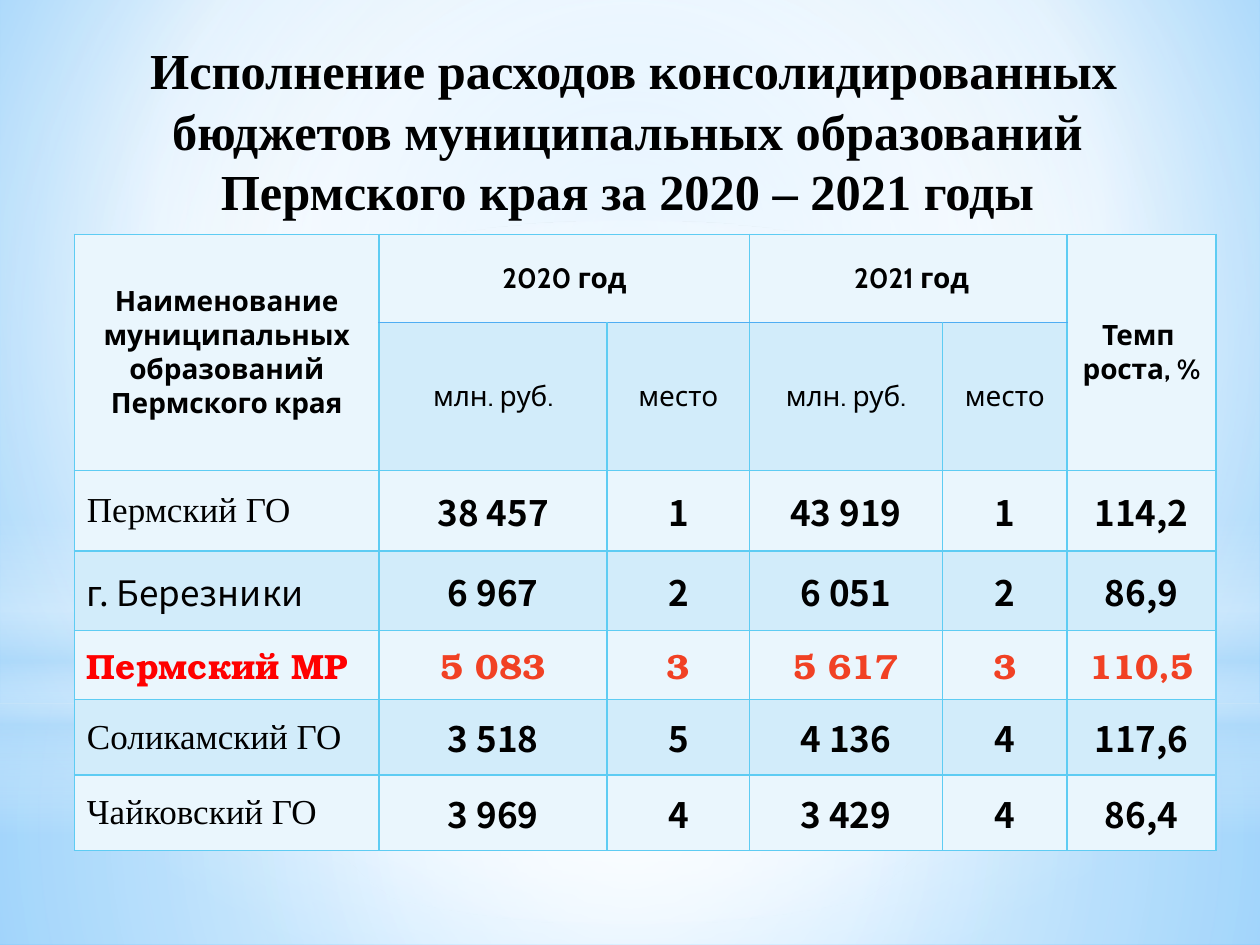
from pptx import Presentation
from pptx.dml.color import RGBColor
from pptx.enum.shapes import MSO_SHAPE
from pptx.enum.text import MSO_ANCHOR, PP_ALIGN
from pptx.oxml import parse_xml
from pptx.oxml.ns import nsdecls, qn
from pptx.util import Pt

RECTANGLE, OVAL = MSO_SHAPE.RECTANGLE, MSO_SHAPE.OVAL
MIDDLE = MSO_ANCHOR.MIDDLE
LEFT, CENTER = PP_ALIGN.LEFT, PP_ALIGN.CENTER

THEME = {
    "ink": "000000", "red": "FF0000", "orange": "F14124",
    "light": "EAF6FD", "band": "D2ECFA",
    "border": "5ECCF3", "header_border": "4FADF3",
    "white": "FFFFFF", "haze": "B4DCFA", "sky": "9ED5FF", "deep_sky": "5BB9FF",
    "title": 28.8, "header": 16, "body": 20,
    "serif": "Times New Roman", "header_font": "Cabin",
    "number_font": "Noto Sans CJK KR", "accent_font": "TeX Gyre Bonum",
}


def gradient(stops, focus=None):
    stop_xml = "".join(
        f'<a:gs pos="{position * 1000}"><a:srgbClr val="{THEME[color]}">'
        f'<a:alpha val="{opacity * 1000}"/></a:srgbClr></a:gs>'
        for position, color, opacity in stops)
    if focus:
        left, top, right, bottom = [edge * 1000 for edge in focus]
        direction = (f'<a:path path="circle"><a:fillToRect l="{left}" t="{top}" '
                     f'r="{right}" b="{bottom}"/></a:path>')
    else:
        direction = '<a:lin ang="5400000" scaled="0"/>'
    return parse_xml(f'<a:gradFill {nsdecls("a")} rotWithShape="1">'
                     f'<a:gsLst>{stop_xml}</a:gsLst>{direction}</a:gradFill>')


def write(frame, lines, font, size, color, bold, align):
    frame.word_wrap = True
    for index, line in enumerate(lines):
        para = frame.add_paragraph() if index else frame.paragraphs[0]
        para.alignment = align
        span = para.add_run()
        span.text = line
        span.font.name = font
        span.font.size = Pt(size)
        span.font.bold = bold
        span.font.color.rgb = RGBColor.from_string(color)


deck = Presentation()
deck.slide_width, deck.slide_height = Pt(720), Pt(540)
page = deck.slides.add_slide(deck.slide_layouts[5])

page.background.fill.solid()
backdrop = page.element.find(".//" + qn("p:bgPr"))
backdrop.replace(backdrop[0], gradient(
    [(0, "sky", 100), (60, "white", 100), (100, "deep_sky", 100)], (20, 10, 20, 60)))

MIDPOINT = (50, 50, 50, 50)
glows = [
    (RECTANGLE, 401.8, 138.2, MIDPOINT,
     [(0, "white", 91), (37, "white", 76), (100, "haze", 79)]),
    (RECTANGLE, 0, 401.8, MIDPOINT,
     [(0, "white", 89), (48, "white", 62), (100, "haze", 79)]),
    (RECTANGLE, 296.6, 180, None,
     [(0, "white", 0), (29, "white", 30), (45, "haze", 40),
      (55, "white", 26), (65, "haze", 60), (100, "white", 0)]),
    (OVAL, 126, 401.8, MIDPOINT, [(0, "white", 100), (56, "white", 0)]),
]
for kind, top, height, focus, stops in glows:
    glow = page.shapes.add_shape(kind, 0, Pt(top), Pt(720), Pt(height))
    glow.shadow.inherit = False
    glow.line.fill.background()
    glow.fill.background()
    properties = glow.element.spPr
    properties.replace(properties.find(qn("a:noFill")), gradient(stops, focus))

column_widths = [174.2, 130.3, 81.4, 110.2, 71.3, 85]
row_heights = [50.4, 52.6, 46, 45.4, 39.4, 43.2, 43.2]
frame = page.shapes.add_table(len(row_heights), len(column_widths), Pt(42.5), Pt(133.9),
                              Pt(sum(column_widths)), Pt(sum(row_heights)))
table = frame.table
table.first_row = table.horz_banding = False
for column, width in zip(table.columns, column_widths):
    column.width = Pt(width)
for row, height in zip(table.rows, row_heights):
    row.height = Pt(height)

for r in range(len(row_heights)):
    for c in range(len(column_widths)):
        cell = table.cell(r, c)
        cell.vertical_anchor = MIDDLE
        cell.fill.solid()
        cell.fill.fore_color.rgb = RGBColor.from_string(THEME["band" if r % 2 else "light"])
        for index, side in enumerate("LRTB"):
            between_headers = 0 < c < 5 and (r, side) in [(0, "B"), (1, "T")]
            color = THEME["header_border" if between_headers else "border"]
            cell._tc.get_or_add_tcPr().insert(index, parse_xml(
                f'<a:ln{side} {nsdecls("a")} w="12700"><a:solidFill>'
                f'<a:srgbClr val="{color}"/></a:solidFill></a:ln{side}>'))

headers = [
    (0, 0, 1, 0, ["Наименование муниципальных образований Пермского края"]),
    (0, 1, 0, 2, ["2020 год"]),
    (0, 3, 0, 4, [" 2021 год"]),
    (0, 5, 1, 5, ["Темп ", "роста, %"]),
]
for top, left, bottom, right, lines in headers:
    table.cell(top, left).merge(table.cell(bottom, right))
    write(table.cell(top, left).text_frame, lines, THEME["header_font"],
          THEME["header"], THEME["ink"], True, CENTER)
for c, label in enumerate(["млн. руб.", "место"] * 2, 1):
    write(table.cell(1, c).text_frame, [label], THEME["header_font"],
          THEME["header"], THEME["ink"], False, CENTER)

serif, number_font, accent_font = THEME["serif"], THEME["number_font"], THEME["accent_font"]
municipalities = [
    (serif, "Пермский ГО", "38 457", "1", "43 919", "1", "114,2"),
    (number_font, "г. Березники", "6 967", "2", "6 051", "2", "86,9"),
    (accent_font, "Пермский МР", "5 083", "3", "5 617", "3", "110,5"),
    (serif, "Соликамский ГО", "3 518", "5", "4 136", "4", "117,6"),
    (serif, "Чайковский ГО", "3 969", "4", "3 429", "4", "86,4"),
]
for r, (name_font, name, *values) in enumerate(municipalities, 2):
    accent = name_font == accent_font
    write(table.cell(r, 0).text_frame, [name], name_font, THEME["body"],
          THEME["red" if accent else "ink"], accent, LEFT)
    for c, value in enumerate(values, 1):
        write(table.cell(r, c).text_frame, [value], accent_font if accent else number_font,
              THEME["body"], THEME["orange" if accent else "ink"], True, CENTER)

title = page.shapes.title
title.left, title.top, title.width, title.height = Pt(34.6), Pt(20.9), Pt(648), Pt(106.6)
title.text_frame.vertical_anchor = MIDDLE
write(title.text_frame,
      [" Исполнение расходов консолидированных бюджетов муниципальных образований "
       "Пермского края за 2020 – 2021 годы"],
      serif, THEME["title"], THEME["ink"], True, CENTER)
page.shapes.element.append(title.element)

deck.save("out.pptx")
